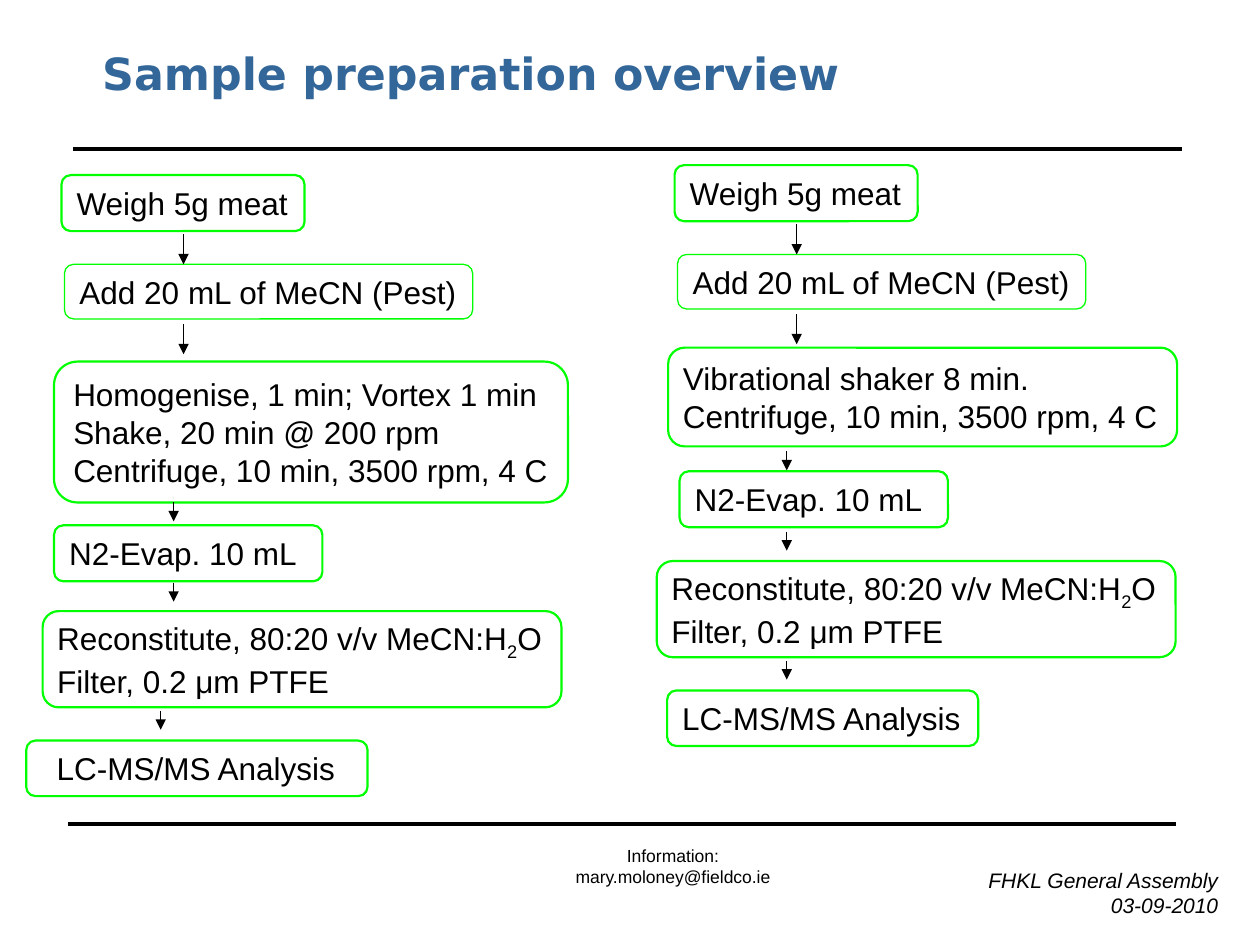
from dataclasses import dataclass

from lxml.etree import SubElement
from pptx import Presentation
from pptx.dml.color import RGBColor
from pptx.enum.shapes import MSO_CONNECTOR, MSO_SHAPE
from pptx.enum.text import MSO_ANCHOR, PP_ALIGN
from pptx.oxml.ns import qn
from pptx.util import Cm, Pt

BLACK = RGBColor(0x00, 0x00, 0x00)
GREEN = RGBColor(0x00, 0xFF, 0x00)
TITLE_BLUE = RGBColor(0x33, 0x66, 0x99)
BODY_FONT = "Arial"
TITLE_FONT = "DejaVu Sans"
INSET = 0.13


@dataclass
class Step:
    """One box of a workflow, in cm from the column's origin, and the arrow below it."""
    lines: list
    left: float
    top: float
    width: float
    height: float
    indent: float = 0.25
    border: float = 1.25
    arrow_left: float = 2.26
    arrow_gap: float = 0.1
    arrow_length: float = 0.38


def weigh_step():
    return Step(["Weigh 5g meat"], 0, 0, 4.9, 1.13,
                arrow_left=2.46, arrow_gap=0.06, arrow_length=0.61)


def solvent_step():
    return Step(["Add 20 mL of MeCN (Pest)"], 0.06, 1.8, 8.23, 1.1,
                border=0.75, arrow_left=2.46, arrow_length=0.61)


def evaporation_step(left, top, arrow_gap):
    return Step(["N2-Evap. 10 mL"], left, top, 5.41, 1.13, arrow_gap=arrow_gap)


def reconstitution_step(left, top, arrow_left):
    return Step(["Reconstitute, 80:20 v/v MeCN:H_2_O", "Filter, 0.2 μm PTFE"],
                left, top, 10.46, 1.94, indent=0.2,
                arrow_left=arrow_left, arrow_gap=0.07)


def analysis_step(left, top, width, indent):
    return Step(["LC-MS/MS Analysis"], left, top, width, 1.12, indent=indent)


HOMOGENISER_STEPS = [
    weigh_step(),
    solvent_step(),
    Step(["Homogenise, 1 min; Vortex 1 min", "Shake, 20 min @ 200 rpm",
          "Centrifuge, 10 min, 3500 rpm, 4 C"],
         -0.15, 3.76, 10.36, 2.84, arrow_gap=0),
    evaporation_step(-0.15, 7.06, arrow_gap=0.03),
    reconstitution_step(-0.38, 8.79, arrow_left=2.0),
    analysis_step(-0.71, 11.4, 6.88, indent=0.56),
]
SHAKER_STEPS = [
    weigh_step(),
    solvent_step(),
    Step(["Vibrational shaker 8 min.", "Centrifuge, 10 min, 3500 rpm, 4 C"],
         -0.13, 3.68, 10.26, 1.99, indent=0.2),
    evaporation_step(0.1, 6.17, arrow_gap=0.09),
    reconstitution_step(-0.36, 7.98, arrow_left=2.26),
    analysis_step(-0.15, 10.59, 6.27, indent=0.25),
]


def set_insets(frame, left, right, vertical):
    frame.margin_left, frame.margin_right = Cm(left), Cm(right)
    frame.margin_top = frame.margin_bottom = Cm(vertical)


def write_lines(frame, lines, size, align, italic=False):
    """Write one paragraph per line; text between underscores is subscript."""
    for number, line in enumerate(lines):
        paragraph = frame.paragraphs[0] if number == 0 else frame.add_paragraph()
        paragraph.alignment = align
        for position, part in enumerate(line.split("_")):
            run = paragraph.add_run()
            run.text = part
            run.font.name = BODY_FONT
            run.font.size = Pt(size)
            run.font.italic = italic
            run.font.color.rgb = BLACK
            if position % 2:
                run.font._element.set("baseline", "-25000")


def add_line(slide, start, end, weight, arrow=False):
    line = slide.shapes.add_connector(
        MSO_CONNECTOR.STRAIGHT, *(Cm(value) for value in (*start, *end)))
    line.line.color.rgb = BLACK
    line.line.width = Pt(weight)
    if arrow:
        SubElement(line.line._get_or_add_ln(), qn("a:tailEnd"), type="triangle")
    SubElement(line._element.spPr, qn("a:effectLst"))


def add_title(slide, left, top, width, height):
    title = slide.shapes.title
    title.left, title.top = Cm(left), Cm(top)
    title.width, title.height = Cm(width), Cm(height)
    frame = title.text_frame
    frame.word_wrap = True
    frame.vertical_anchor = MSO_ANCHOR.MIDDLE
    set_insets(frame, INSET, INSET, INSET)
    paragraph = frame.paragraphs[0]
    paragraph.alignment = PP_ALIGN.LEFT
    run = paragraph.add_run()
    run.text = "Sample preparation overview"
    run.font.name = TITLE_FONT
    run.font.size = Pt(25.3)
    run.font.bold = True
    run.font.color.rgb = TITLE_BLUE


def add_step(slide, step, left, top):
    box = slide.shapes.add_shape(
        MSO_SHAPE.ROUNDED_RECTANGLE, Cm(left + step.left), Cm(top + step.top),
        Cm(step.width), Cm(step.height))
    box.shadow.inherit = False
    box.fill.background()
    box.line.color.rgb = GREEN
    box.line.width = Pt(step.border)
    frame = box.text_frame
    frame.word_wrap = True
    frame.vertical_anchor = MSO_ANCHOR.MIDDLE
    set_insets(frame, step.indent, 0, 0)
    write_lines(frame, step.lines, 18, PP_ALIGN.LEFT)


def add_workflow(slide, steps, left, top):
    for step in steps:
        add_step(slide, step, left, top)
    for step in steps[:-1]:
        x = left + step.arrow_left
        y = top + step.top + step.height + step.arrow_gap
        add_line(slide, (x, y), (x, y + step.arrow_length), 0.75, arrow=True)


def add_footer_note(slide, lines, left, top, width, height, size, align, italic=False):
    note = slide.shapes.add_textbox(Cm(left), Cm(top), Cm(width), Cm(height))
    frame = note.text_frame
    frame.word_wrap = True
    set_insets(frame, INSET, INSET, INSET)
    write_lines(frame, lines, size, align, italic)


def add_footer(slide, left, top):
    add_line(slide, (left, top), (left + 22.33, top), 2.25)
    add_footer_note(slide, ["FHKL General Assembly", "03-09-2010"],
                    left + 12.75, top + 0.74, 10.57, 1.22, 12, PP_ALIGN.RIGHT, italic=True)
    add_footer_note(slide, ["Information:", "mary.moloney@fieldco.ie"],
                    left + 9.53, top + 0.3, 5.33, 1.02, 10, PP_ALIGN.CENTER)


def main():
    presentation = Presentation()
    presentation.slide_width, presentation.slide_height = Cm(25.4), Cm(19.05)
    slide = presentation.slides.add_slide(presentation.slide_layouts[5])
    add_title(slide, 1.93, 0.81, 23.16, 1.3)
    add_line(slide, (1.47, 3), (23.83, 3), 2.25)
    add_workflow(slide, HOMOGENISER_STEPS, 1.24, 3.53)
    add_workflow(slide, SHAKER_STEPS, 13.6, 3.33)
    add_footer(slide, 1.37, 16.61)
    presentation.save("out.pptx")


if __name__ == "__main__":
    main()
